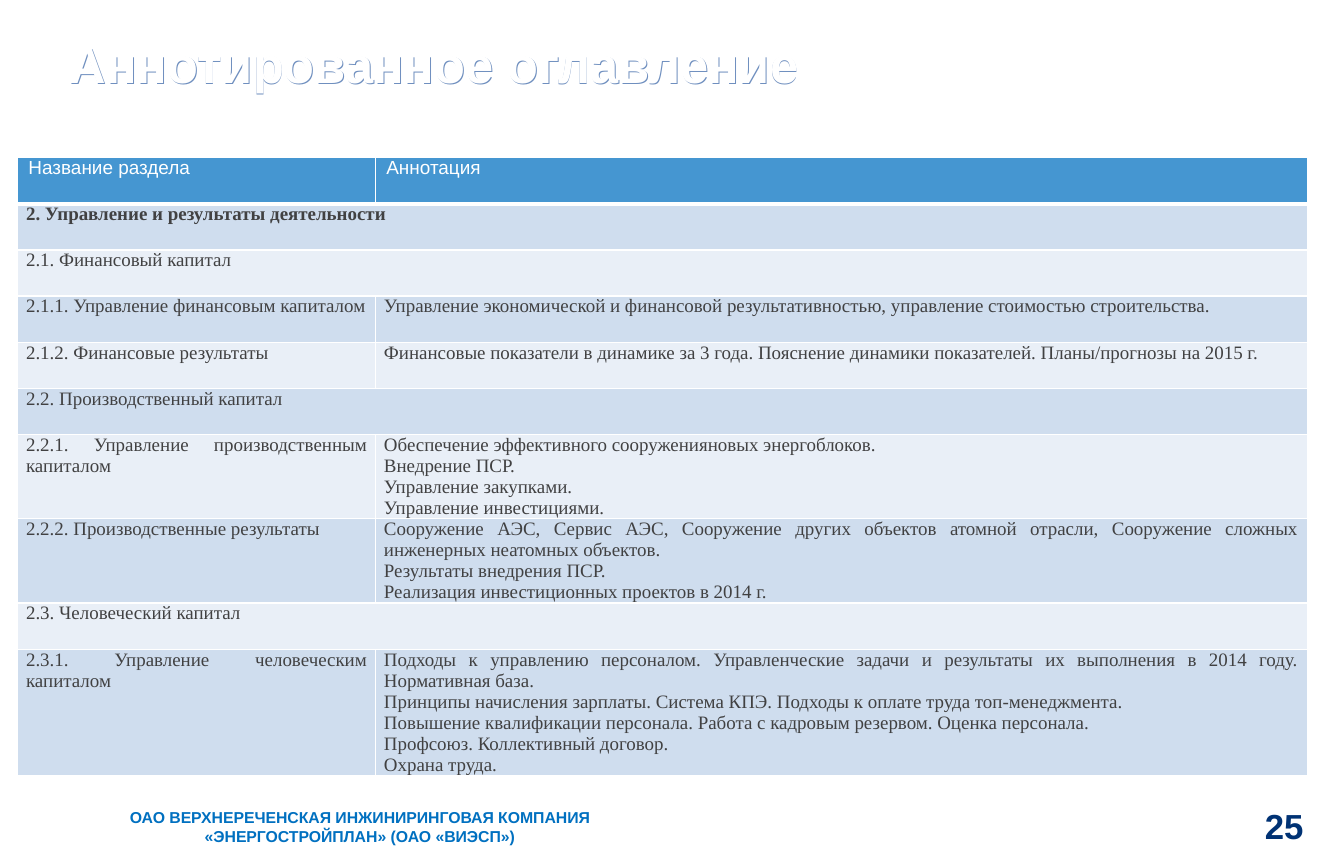
from lxml.etree import SubElement
from pptx import Presentation
from pptx.dml.color import RGBColor
from pptx.enum.text import MSO_ANCHOR as ANCHOR, MSO_AUTO_SIZE as AUTOSIZE, PP_ALIGN as ALIGN
from pptx.oxml.ns import qn
from pptx.util import Emu, Pt

WHITE = RGBColor(0xFF, 0xFF, 0xFF)
HEADER = RGBColor(0x45, 0x96, 0xD1)
BAND_DARK = RGBColor(0xCF, 0xDD, 0xEE)
BAND_LIGHT = RGBColor(0xE9, 0xEF, 0xF7)
INK = RGBColor(0x41, 0x41, 0x42)
NAVY = RGBColor(0x00, 0x32, 0x74)
BLUE = RGBColor(0x00, 0x70, 0xC0)
SHADOW = RGBColor(0x6F, 0x8F, 0xBF)

SANS, SERIF = "Arial", "Times New Roman"
SLIDE_W, SLIDE_H = 1134, 720
COLS = (302, 786)
ROW = 39

SECTIONS = [
    ("Название раздела", ["Аннотация"]),
    ("2. Управление и результаты деятельности", []),
    ("2.1. Финансовый капитал", []),
    ("2.1.1. Управление финансовым капиталом", [
        "Управление экономической и финансовой результативностью, управление стоимостью строительства."]),
    ("2.1.2. Финансовые результаты", [
        "Финансовые показатели в динамике за 3 года. Пояснение динамики показателей. Планы/прогнозы на 2015 г."]),
    ("2.2. Производственный капитал", []),
    ("2.2.1. Управление производственным капиталом", [
        "Обеспечение эффективного сооруженияновых энергоблоков.",
        "Внедрение ПСР.",
        "Управление закупками.",
        "Управление инвестициями."]),
    ("2.2.2. Производственные результаты", [
        "Сооружение АЭС, Сервис АЭС, Сооружение других объектов атомной отрасли, "
        "Сооружение сложных инженерных неатомных объектов.",
        "Результаты внедрения ПСР.",
        "Реализация инвестиционных проектов в 2014 г."]),
    ("2.3. Человеческий капитал", []),
    ("2.3.1. Управление человеческим капиталом", [
        "Подходы к управлению персоналом. Управленческие задачи и результаты их выполнения в 2014 году. "
        "Нормативная база.",
        "Принципы начисления зарплаты. Система КПЭ. Подходы к оплате труда топ-менеджмента.",
        "Повышение квалификации персонала. Работа с кадровым резервом. Оценка персонала.",
        "Профсоюз. Коллективный договор.",
        "Охрана труда."]),
]


def px(n):
    return Emu(n * 9525)


def place(sp, box):
    sp.left, sp.top, sp.width, sp.height = map(px, box)


def write(tf, lines, size, color, font=SANS, bold=False, align=ALIGN.LEFT):
    for i, line in enumerate(lines):
        p = tf.add_paragraph() if i else tf.paragraphs[0]
        p.alignment = align
        r = p.add_run()
        r.text = line
        f = r.font
        f.name, f.size, f.bold, f.color.rgb = font, Pt(size), bold, color


def set_frame(tf, left, right, inset_y, anchor):
    tf.word_wrap = True
    tf.auto_size = AUTOSIZE.NONE
    tf.margin_left, tf.margin_right = px(left), px(right)
    tf.margin_top = tf.margin_bottom = px(inset_y)
    tf.vertical_anchor = anchor


def add_title(slide, box):
    sp = slide.shapes.title
    place(sp, box)
    set_frame(sp.text_frame, 0, 0, 0, ANCHOR.MIDDLE)
    write(sp.text_frame, ["Аннотированное оглавление"], 32, WHITE, bold=True)
    sp.text_frame.paragraphs[0].line_spacing = 0.9
    effects = SubElement(sp._element.spPr, qn("a:effectLst"))
    shadow = SubElement(effects, qn("a:outerShdw"), dist=str(px(1)), dir="2700000", algn="ctr")
    SubElement(shadow, qn("a:srgbClr"), val=str(SHADOW))


def add_borders(cell, bottom):
    tcPr = cell._tc.get_or_add_tcPr()
    for side, width in (("L", 1), ("R", 1), ("T", 1), ("B", bottom)):
        ln = SubElement(tcPr, qn(f"a:ln{side}"), w=str(Pt(width)))
        fill = SubElement(ln, qn("a:solidFill"))
        SubElement(fill, qn("a:srgbClr"), val=str(WHITE))


def fill_cell(cell, lines, row):
    head = row == 0
    add_borders(cell, 3 if head else 1)
    cell.fill.solid()
    cell.fill.fore_color.rgb = HEADER if head else BAND_DARK if row % 2 else BAND_LIGHT
    cell.margin_left = cell.margin_right = px(9 if head else 7)
    cell.margin_top = cell.margin_bottom = 0
    write(cell.text_frame, lines, 12, WHITE if head else INK,
          SANS if head else SERIF, bold=row == 1, align=ALIGN.JUSTIFY)


def add_contents(slide, left, top):
    table = slide.shapes.add_table(len(SECTIONS), len(COLS), px(left), px(top),
                                   px(sum(COLS)), px(ROW * len(SECTIONS))).table
    for col, width in zip(table.columns, COLS):
        col.width = px(width)
    for i, (name, notes) in enumerate(SECTIONS):
        first, second = table.cell(i, 0), table.cell(i, 1)
        fill_cell(first, [name], i)
        fill_cell(second, notes, i)
        if not notes:
            first.merge(second)


def add_footer(slide, box):
    x, y, w, h = box
    number_w = 101
    number = slide.shapes.add_textbox(px(x + w - number_w), px(y), px(number_w), px(h))
    set_frame(number.text_frame, 0, 34, 0, ANCHOR.MIDDLE)
    write(number.text_frame, ["25"], 22, NAVY, bold=True, align=ALIGN.RIGHT)
    company = slide.shapes.add_textbox(px(x), px(y), px(473), px(h))
    set_frame(company.text_frame, 10, 10, 5, ANCHOR.TOP)
    write(company.text_frame,
          ["ОАО ВЕРХНЕРЕЧЕНСКАЯ ИНЖИНИРИНГОВАЯ КОМПАНИЯ «ЭНЕРГОСТРОЙПЛАН» (ОАО «ВИЭСП»)"],
          10, BLUE, bold=True, align=ALIGN.CENTER)


def main():
    prs = Presentation()
    prs.slide_width, prs.slide_height = px(SLIDE_W), px(SLIDE_H)
    slide = prs.slides.add_slide(prs.slide_layouts[5])
    add_title(slide, (59, 9, 1018, 95))
    add_contents(slide, 15, 133)
    add_footer(slide, (67, 677, SLIDE_W - 67, 39))
    prs.save("out.pptx")


if __name__ == "__main__":
    main()
